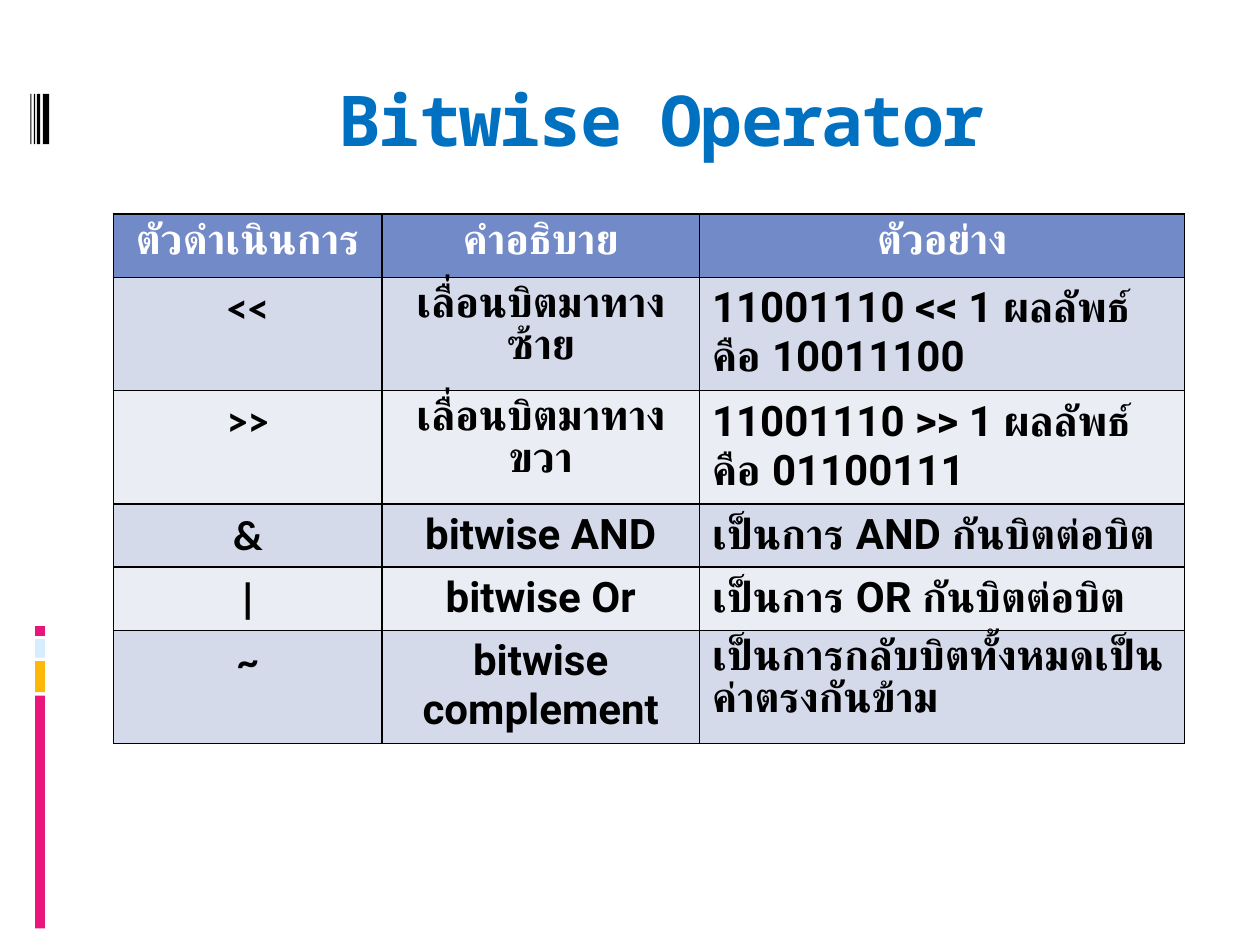
from collections import namedtuple

from lxml.etree import SubElement
from pptx import Presentation
from pptx.dml.color import RGBColor
from pptx.enum.shapes import MSO_SHAPE
from pptx.enum.text import MSO_ANCHOR, PP_ALIGN
from pptx.oxml.ns import qn
from pptx.util import Pt

Theme = namedtuple(
    "Theme", "blue header band light white black pink sky amber title_size table_size title_font body_font sign_font"
)
theme = Theme(
    blue="0070C0", header="738AC8", band="D5DAEB", light="EBEDF5",
    white="FFFFFF", black="000000", pink="EA157A", sky="D6ECFF", amber="FEB80A",
    title_size=40, table_size=24,
    title_font="Noto Sans Mono", body_font="Roboto", sign_font="Calibri",
)


def write(frame, text, *, font, size, color, align=PP_ALIGN.CENTER, spacing=None):
    frame.word_wrap = True
    para = frame.paragraphs[0]
    para.alignment = align
    span = para.add_run()
    span.text = text
    span.font.name = font
    span.font.size = Pt(size)
    span.font.bold = True
    span.font.color.rgb = RGBColor.from_string(color)
    if spacing is not None:
        span.font._element.set("spc", str(spacing * 100))


def outline(cell, color, width):
    properties = cell._tc.get_or_add_tcPr()
    for position, side in enumerate(("lnL", "lnR", "lnT", "lnB")):
        line = SubElement(properties, qn(f"a:{side}"), w=str(Pt(width)))
        fill = SubElement(line, qn("a:solidFill"))
        SubElement(fill, qn("a:srgbClr"), val=color)
        properties.insert(position, line)


deck = Presentation()
deck.slide_width = Pt(720)
deck.slide_height = Pt(540)
page = deck.slides.add_slide(deck.slide_layouts[6])

color_bars = [
    (20, 397.6, 5.7, 133, theme.pink),
    (20, 377.8, 5.7, 17.8, theme.amber),
    (20, 365.2, 5.7, 10.7, theme.sky),
    (20, 357.8, 5.7, 5.6, theme.pink),
]
barcode = [
    (left, 53.6, width, 28.8, theme.black)
    for left, width in ((24.5, 3.6), (21, 2), (19.4, 0.7), (17.3, 0.7))
]
for left, top, width, height, color in color_bars + barcode:
    bar = page.shapes.add_shape(MSO_SHAPE.RECTANGLE, Pt(left), Pt(top), Pt(width), Pt(height))
    bar.shadow.inherit = False
    bar.fill.solid()
    bar.fill.fore_color.rgb = RGBColor.from_string(color)
    bar.line.fill.background()

title_box = page.shapes.add_textbox(Pt(72), Pt(40.4), Pt(612), Pt(72))
title_box.text_frame.vertical_anchor = MSO_ANCHOR.TOP
write(title_box.text_frame, "Bitwise Operator", font=theme.title_font,
      size=theme.title_size, color=theme.blue, spacing=-1)

rows = [
    ("ตัวดำเนินการ", "คำอธิบาย", "ตัวอย่าง"),
    ("<<", "เลื่อนบิตมาทางซ้าย", "11001110 << 1 ผลลัพธ์คือ 10011100"),
    (">>", "เลื่อนบิตมาทางขวา", "11001110 >> 1 ผลลัพธ์คือ 01100111"),
    ("&", "bitwise AND", "เป็นการ AND กันบิตต่อบิต"),
    ("|", "bitwise Or", "เป็นการ OR กันบิตต่อบิต"),
    ("~", "bitwise complement", "เป็นการกลับบิตทั้งหมดเป็นค่าตรงกันข้าม"),
]
column_widths = [153.4, 181.4, 277.2]
row_height = 29.2

table = page.shapes.add_table(
    len(rows), len(column_widths), Pt(64.9), Pt(122.4), Pt(sum(column_widths)), Pt(row_height * len(rows))
).table
for column, width in zip(table.columns, column_widths):
    column.width = Pt(width)

for row_index, texts in enumerate(rows):
    is_header = row_index == 0
    fill_color = theme.header if is_header else (theme.light, theme.band)[row_index % 2]
    for column_index, text in enumerate(texts):
        cell = table.cell(row_index, column_index)
        cell.fill.solid()
        cell.fill.fore_color.rgb = RGBColor.from_string(fill_color)
        outline(cell, theme.black, 1)
        is_sign = column_index == 0 and not is_header
        is_example = column_index == 2 and not is_header
        write(
            cell.text_frame, text,
            font=theme.sign_font if is_sign else theme.body_font,
            size=theme.table_size,
            color=theme.white if is_header else theme.black,
            align=PP_ALIGN.LEFT if is_example else PP_ALIGN.CENTER,
        )

deck.save("out.pptx")
